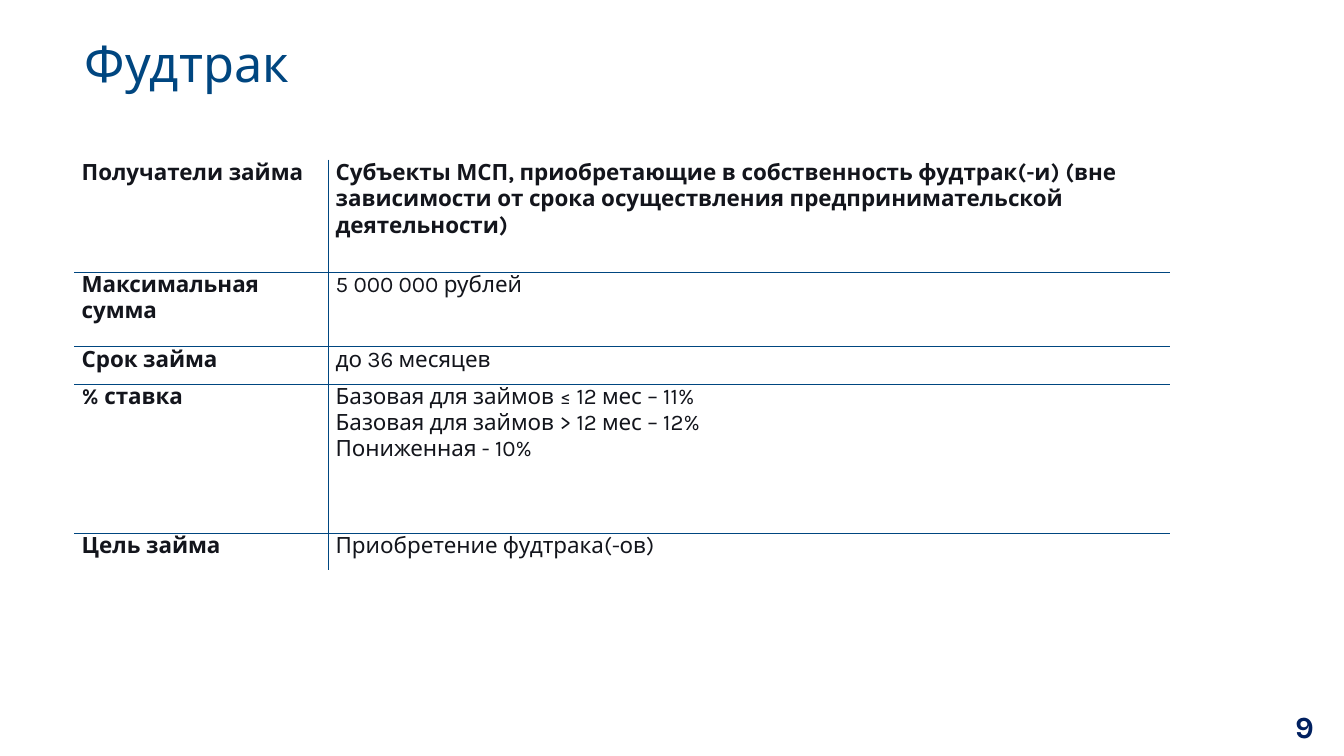
from lxml import etree
from pptx import Presentation
from pptx.dml.color import RGBColor
from pptx.enum.text import MSO_ANCHOR, PP_ALIGN
from pptx.oxml.ns import qn
from pptx.util import Inches, Pt

MIDDLE = MSO_ANCHOR.MIDDLE
LEFT, RIGHT = PP_ALIGN.LEFT, PP_ALIGN.RIGHT

# Content
TITLE = "Фудтрак"
PAGE_NUMBER = "9"
LOAN_TERMS = [  # label, value, row height
    ("Получатели займа",
     "Субъекты МСП, приобретающие в собственность фудтрак(-и) (вне зависимости "
     "от срока осуществления предпринимательской деятельности)", 1.11),
    ("Максимальная сумма", "5 000 000 рублей", 0.74),
    ("Срок займа", "до 36 месяцев", 0.37),
    ("% ставка",
     "Базовая для займов ≤ 12 мес – 11%\n"
     "Базовая для займов > 12 мес – 12%\n"
     "Пониженная - 10%", 1.48),
    ("Цель займа", "Приобретение фудтрака(-ов)", 0.37),
]
COLUMN_WIDTHS = (2.52, 8.34)

FONT = "Karla"
BLUE, NAVY, INK, WHITE = "004680", "002060", "13151C", "FFFFFF"


def color(value):
    return RGBColor.from_string(value)


def format_text(frame, size, tint, bold=False, align=LEFT):
    for para in frame.paragraphs:
        para.alignment = align
        for span in para.runs:
            span.font.name = FONT
            span.font.size = Pt(size)
            span.font.bold = bold
            span.font.color.rgb = color(tint)


def add_border(cell, side, inner):
    """Blue rule between cells, white on the outer edge."""
    width, tint = (0.75, BLUE) if inner else (1, WHITE)
    line = etree.SubElement(cell._tc.get_or_add_tcPr(), qn("a:ln" + side), w=str(Pt(width)))
    fill = etree.SubElement(line, qn("a:solidFill"))
    etree.SubElement(fill, qn("a:srgbClr"), val=tint)


deck = Presentation()
deck.slide_width, deck.slide_height = Inches(13.33), Inches(7.5)
page = deck.slides.add_slide(deck.slide_layouts[5])

# Title
title = page.shapes.title
title.left, title.top = Inches(0.74), Inches(0.21)
title.width, title.height = Inches(11.86), Inches(0.9)
title.text_frame.text = TITLE
title.text_frame.vertical_anchor = MIDDLE
title.text_frame.paragraphs[0].line_spacing = 0.9
format_text(title.text_frame, 36, BLUE)

# Loan terms table
last_row, last_column = len(LOAN_TERMS) - 1, len(COLUMN_WIDTHS) - 1
total_height = sum(height for _, _, height in LOAN_TERMS)
table = page.shapes.add_table(
    len(LOAN_TERMS), len(COLUMN_WIDTHS), Inches(0.74), Inches(1.59),
    Inches(sum(COLUMN_WIDTHS)), Inches(total_height)).table
table.first_row = table.horz_banding = False
for column, width in zip(table.columns, COLUMN_WIDTHS):
    column.width = Inches(width)

for r, (label, value, height) in enumerate(LOAN_TERMS):
    table.rows[r].height = Inches(height)
    for c, text in enumerate((label, value)):
        cell = table.cell(r, c)
        cell.margin_left = cell.margin_right = Inches(0.07)
        cell.margin_top = cell.margin_bottom = 0
        cell.text_frame.text = text
        format_text(cell.text_frame, 16, INK, bold=r == 0 or c == 0)
        add_border(cell, "L", c > 0)
        add_border(cell, "R", c < last_column)
        add_border(cell, "T", r > 0)
        add_border(cell, "B", r < last_row)
        cell.fill.solid()
        cell.fill.fore_color.rgb = color(WHITE)

# Page number
number_box = page.shapes.add_textbox(Inches(10.07), Inches(7.05), Inches(3.06), Inches(0.31))
number_box.text_frame.word_wrap = True
number_box.text_frame.vertical_anchor = MIDDLE
number_box.text_frame.text = PAGE_NUMBER
format_text(number_box.text_frame, 22, NAVY, bold=True, align=RIGHT)

deck.save("out.pptx")
